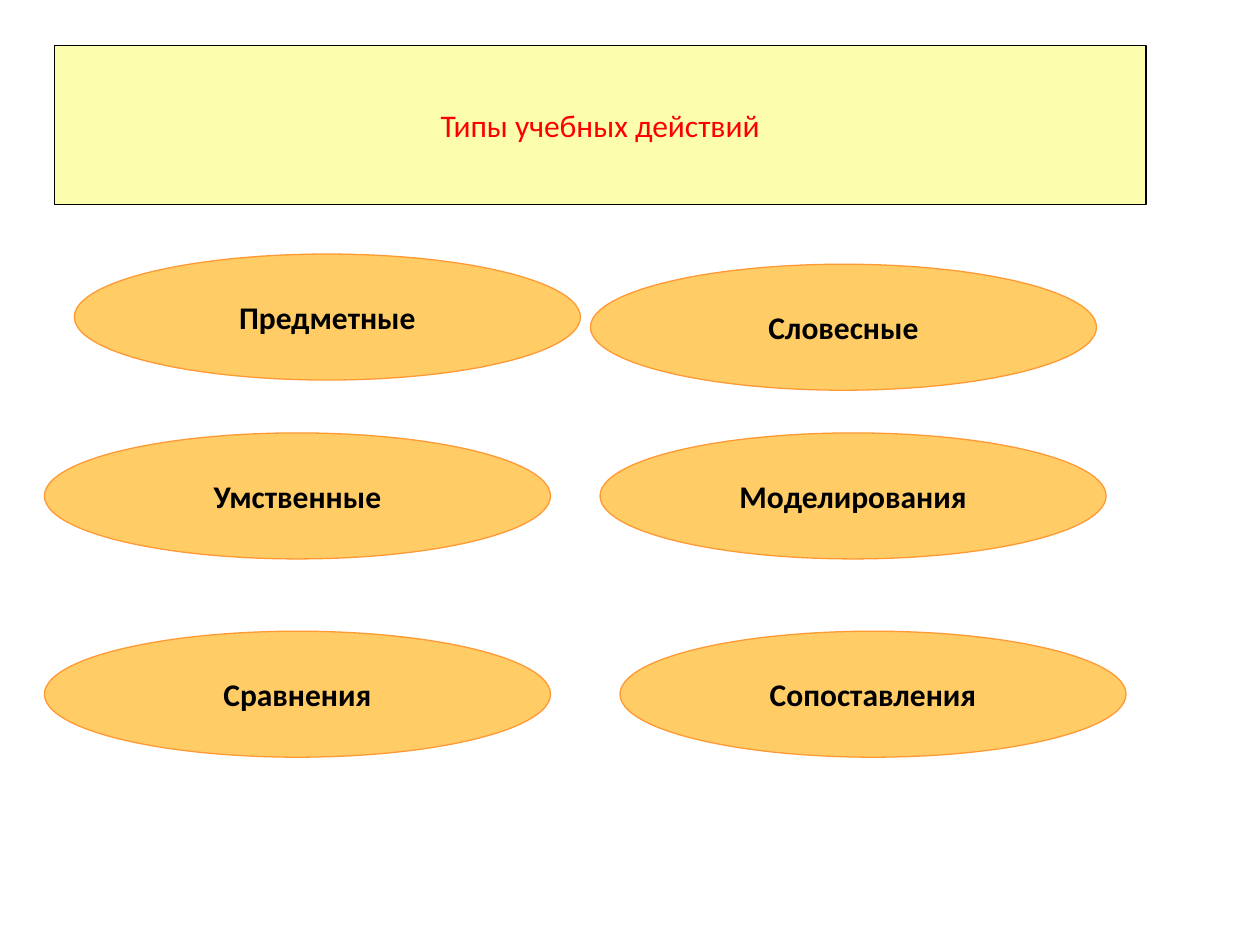
"""Build a slide with a ribbon title and six ellipses naming types of learning actions."""
from lxml.etree import SubElement
from pptx import Presentation
from pptx.dml.color import RGBColor as Color
from pptx.enum.shapes import MSO_SHAPE as Preset
from pptx.enum.text import MSO_ANCHOR as Anchor, MSO_AUTO_SIZE as AutoSize, PP_ALIGN as Align
from pptx.oxml.ns import qn
from pptx.util import Pt

COLORS = {
    "ribbon": "FCFEAE",
    "ribbon_line": "000000",
    "title": "FF0000",
    "ellipse": "FFCC66",
    "ellipse_line": "FF9933",
    "label": "000000",
}
TITLE = "Типы учебных действий"
RIBBON_BOX = (31.1, 25.9, 623.7, 90.8)
RIBBON_ADJUSTMENTS = {"adj1": 12500, "adj2": 50000}
ELLIPSE_SIZE = (289.2, 72)
# label, left, top, space before
ACTIONS = [
    ("Сравнения", 25.4, 360.7, 7),
    ("Умственные", 25.4, 247.4, 3.6),
    ("Словесные", 337.4, 151, 0),
    ("Предметные", 42.5, 145.2, 7),
    ("Сопоставления", 354.3, 360.7, 3.6),
    ("Моделирования", 342.9, 247.4, 3.6),
]


def color(name):
    return Color.from_string(COLORS[name])


def place(shape, left, top, width, height):
    shape.left, shape.top = Pt(left), Pt(top)
    shape.width, shape.height = Pt(width), Pt(height)


def style(shape, fill, line):
    shape.fill.solid()
    shape.fill.fore_color.rgb = color(fill)
    shape.line.color.rgb = color(line)
    shape.line.width = Pt(0.75)
    shape.shadow.inherit = False


def write(shape, text, font_color, bold=False, space_before=0):
    frame = shape.text_frame
    frame.text = text
    frame.word_wrap = False
    frame.auto_size = AutoSize.NONE
    frame.vertical_anchor = Anchor.MIDDLE
    paragraph = frame.paragraphs[0]
    paragraph.alignment = Align.CENTER
    paragraph.space_before = Pt(space_before)
    font = paragraph.font
    font.name, font.size, font.bold = "Calibri", Pt(18), bold
    font.color.rgb = color(font_color)


def add_ribbon(slide):
    ribbon = slide.shapes.title
    place(ribbon, *RIBBON_BOX)
    geometry = SubElement(ribbon.element.spPr, qn("a:prstGeom"), prst="ribbon2")
    guides = SubElement(geometry, qn("a:avLst"))
    for name, value in RIBBON_ADJUSTMENTS.items():
        SubElement(guides, qn("a:gd"), name=name, fmla=f"val {value}")
    style(ribbon, "ribbon", "ribbon_line")
    write(ribbon, TITLE, "title")


def add_action(slide, label, left, top, space_before):
    box = [Pt(length) for length in (left, top, *ELLIPSE_SIZE)]
    ellipse = slide.shapes.add_shape(Preset.OVAL, *box)
    style(ellipse, "ellipse", "ellipse_line")
    write(ellipse, label, "label", True, space_before)


def main():
    presentation = Presentation()
    presentation.slide_width, presentation.slide_height = Pt(720), Pt(540)
    slide = presentation.slides.add_slide(presentation.slide_layouts[5])
    add_ribbon(slide)
    for action in ACTIONS:
        add_action(slide, *action)
    presentation.save("out.pptx")


if __name__ == "__main__":
    main()
